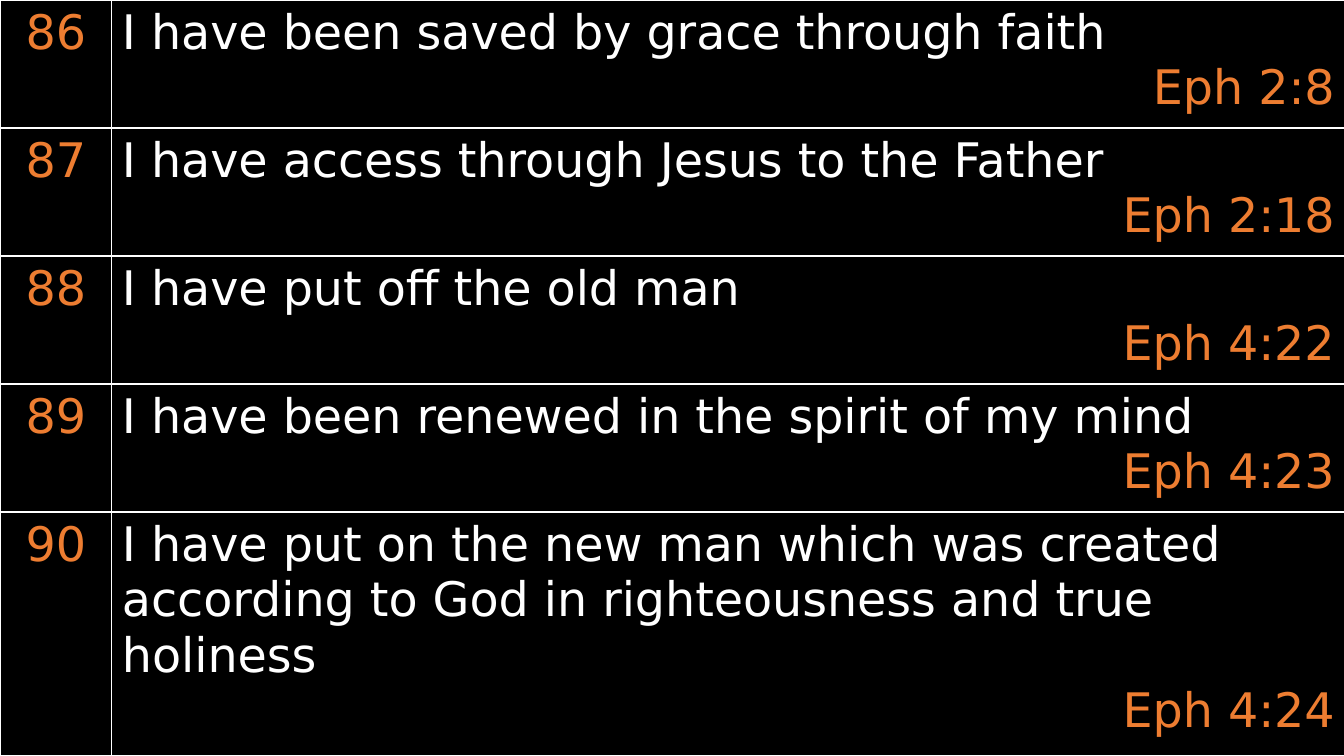
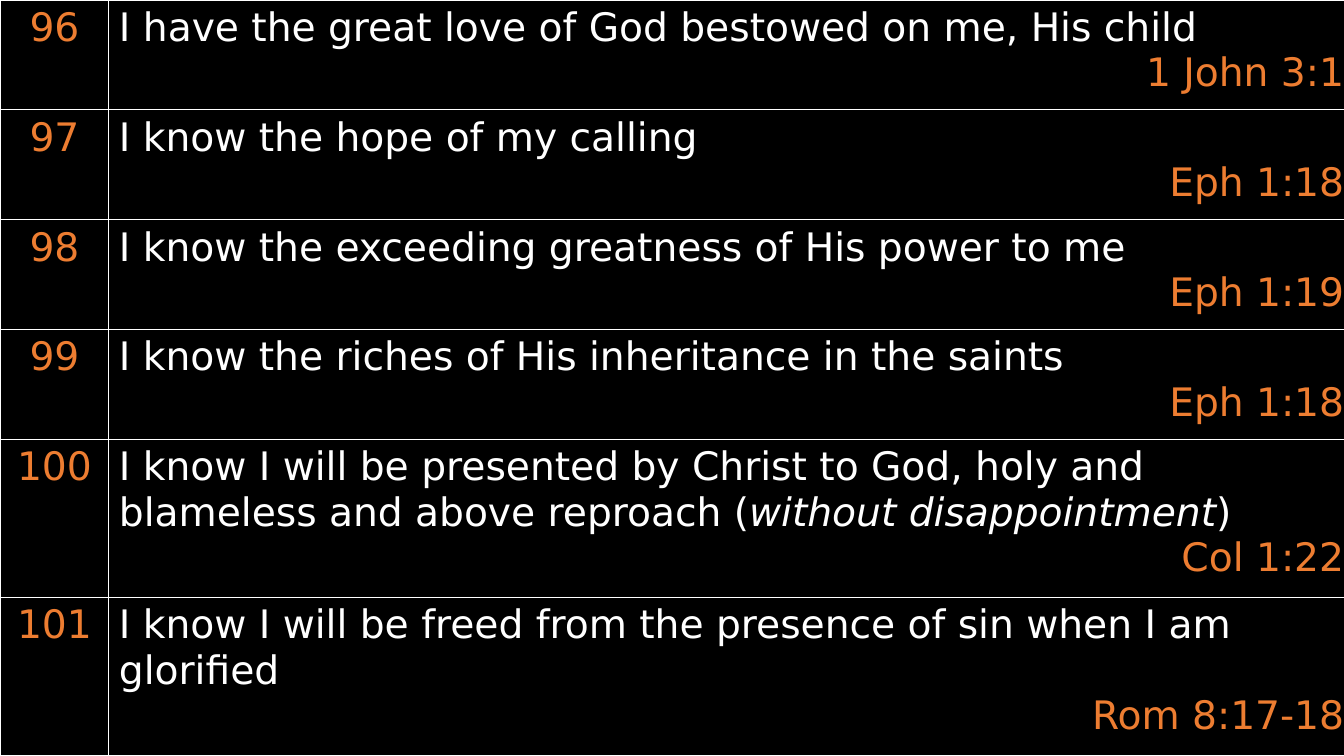
from lxml import etree
from pptx import Presentation
from pptx.dml.color import RGBColor
from pptx.enum.text import PP_ALIGN
from pptx.oxml.ns import qn
from pptx.util import Inches, Pt

LEFT, CENTER, RIGHT = PP_ALIGN.LEFT, PP_ALIGN.CENTER, PP_ALIGN.RIGHT
BLACK = RGBColor(0x00, 0x00, 0x00)
WHITE = RGBColor(0xFF, 0xFF, 0xFF)
ORANGE = RGBColor(0xED, 0x7D, 0x31)
FONT = "DejaVu Sans"

# Each slide: first number, text size, column widths, row heights, verses.
# A verse is its reference and its text parts; every second part is italic.
SLIDES = [
    (86, 34, (1.11, 12.23), [1.27] * 4 + [2.42], [
        ("Eph 2:8", ["I have been saved by grace through faith"]),
        ("Eph 2:18", ["I have access through Jesus to the Father"]),
        ("Eph 4:22", ["I have put off the old man"]),
        ("Eph 4:23", ["I have been renewed in the spirit of my mind"]),
        ("Eph 4:24", ["I have put on the new man which was created according "
                      "to God in righteousness and true holiness"]),
    ]),
    (96, 28, (1.08, 12.35), [1.09] * 4 + [1.57] * 2, [
        ("1 John 3:1", ["I have the great love of God bestowed on me, His child"]),
        ("Eph 1:18", ["I know the hope of my calling"]),
        ("Eph 1:19", ["I know the exceeding greatness of His power to me"]),
        ("Eph 1:18", ["I know the riches of His inheritance in the saints"]),
        ("Col 1:22", ["I know I will be presented by Christ to God, holy and "
                      "blameless and above reproach (",
                      "without disappointment", ")"]),
        ("Rom 8:17-18", ["I know I will be freed from the presence of sin "
                         "when I am glorified"]),
    ]),
]


def write(para, parts, size, color, align):
    para.alignment = align
    for i, part in enumerate(parts):
        run = para.add_run()
        run.text = part
        run.font.name = FONT
        run.font.size = Pt(size)
        run.font.color.rgb = color
        run.font.italic = i % 2 == 1


def style(cell):
    # Borders come before the fill in the cell properties
    props = cell._tc.get_or_add_tcPr()
    for side in ("a:lnL", "a:lnR", "a:lnT", "a:lnB"):
        line = etree.SubElement(props, qn(side), w=str(Pt(1)))
        fill = etree.SubElement(line, qn("a:solidFill"))
        etree.SubElement(fill, qn("a:srgbClr"), val=str(WHITE))
    cell.fill.solid()
    cell.fill.fore_color.rgb = BLACK


prs = Presentation()
prs.slide_width, prs.slide_height = Inches(13.33), Inches(7.5)

for first, size, widths, heights, verses in SLIDES:
    slide = prs.slides.add_slide(prs.slide_layouts[6])
    slide.background.fill.solid()
    slide.background.fill.fore_color.rgb = BLACK

    # Table grid
    table = slide.shapes.add_table(
        len(verses), 2, 0, 0, Inches(sum(widths)), Inches(sum(heights))).table
    table.first_row = table.horz_banding = False
    for col, width in zip(table.columns, widths):
        col.width = Inches(width)

    # Number on the left, verse and reference on the right
    for i, (ref, parts) in enumerate(verses):
        table.rows[i].height = Inches(heights[i])
        num, verse = table.cell(i, 0), table.cell(i, 1)
        style(num)
        style(verse)
        write(num.text_frame.paragraphs[0], [str(first + i)], size, ORANGE, CENTER)
        write(verse.text_frame.paragraphs[0], parts, size, WHITE, LEFT)
        write(verse.text_frame.add_paragraph(), [ref], size, ORANGE, RIGHT)

prs.save("out.pptx")
